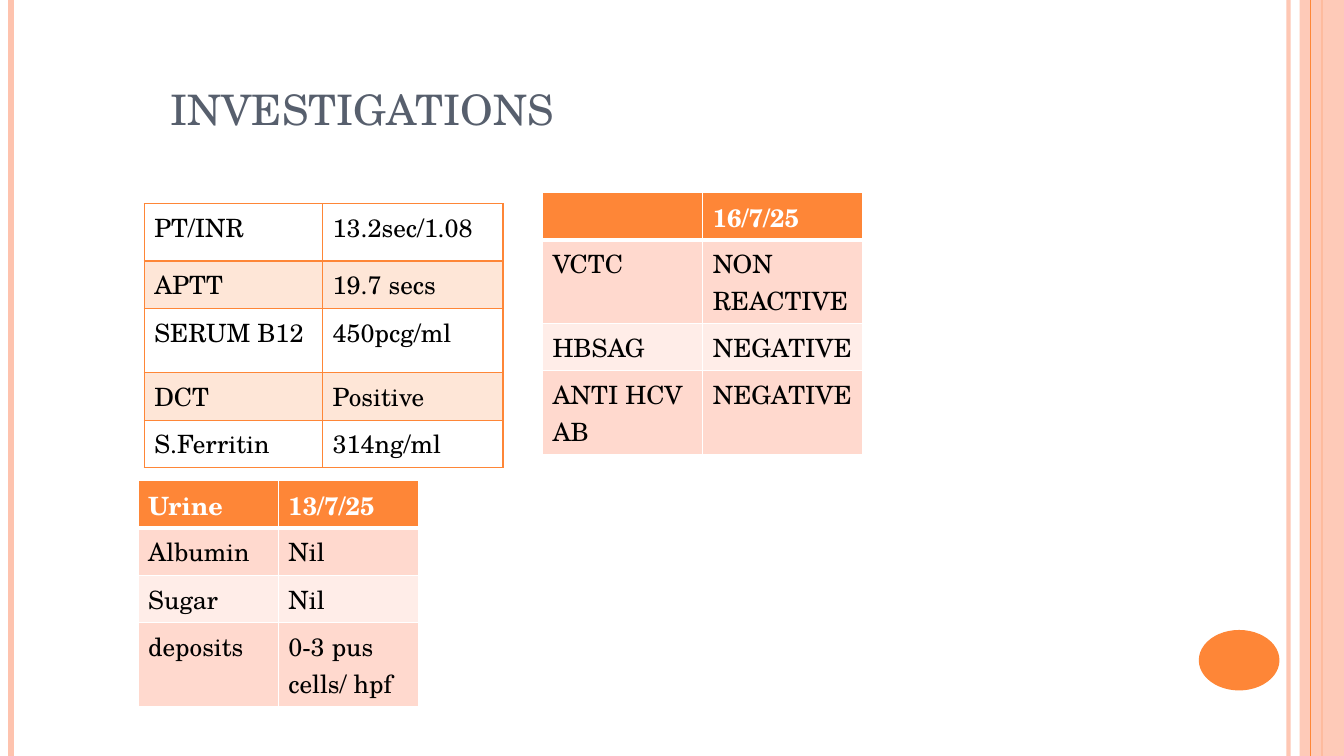
from lxml.etree import SubElement
from pptx import Presentation
from pptx.dml.color import RGBColor
from pptx.enum.shapes import MSO_CONNECTOR, MSO_SHAPE
from pptx.enum.text import MSO_ANCHOR
from pptx.oxml.ns import qn
from pptx.util import Inches, Pt

THEME = {
    "font": "TeX Gyre Schola", "title_size": 30, "body_size": 18,
    "title": "575F6D", "text": "000000", "white": "FFFFFF",
    "accent": "FE8637", "peach": "FEC3AE",
    "band_dark": "FFD9CE", "band_light": "FFEDE8",
}
W, H = 13.33, 7.5
TITLE = "INVESTIGATIONS"

# x, colour, width in points, opacity in percent
RULES = [(12.78, "peach", 3, 93), (0.11, "peach", 4.5, 100),
         (13.11, "accent", 1.5, 100)]
EDGE_RULE = (13, "accent", 0.75, 100)

# Row heights hold one or two lines of text, or a taller set value
ONE, TWO = 0.47, 0.83
TABLES = [
    {"at": (1.43, 2.02), "cols": (1.77, 1.79), "outlined": True,
     "heights": (0.57, ONE, 0.64, ONE, ONE),
     "rows": [("PT/INR", "13.2sec/1.08"), ("APTT", "19.7 secs"),
              ("SERUM B12", "450pcg/ml"), ("DCT", "Positive"),
              ("S.Ferritin", "314ng/ml")]},
    {"at": (5.38, 1.91), "cols": (1.59, 1.59), "outlined": False,
     "heights": (ONE, TWO, ONE, TWO),
     "rows": [("", "16/7/25"), ("VCTC", "NON REACTIVE"),
              ("HBSAG", "NEGATIVE"), ("ANTI HCV AB", "NEGATIVE")]},
    {"at": (1.37, 4.77), "cols": (1.39, 1.39), "outlined": False,
     "heights": (ONE, ONE, ONE, TWO),
     "rows": [("Urine", "13/7/25"), ("Albumin", "Nil"), ("Sugar", "Nil"),
              ("deposits", "0-3 pus cells/ hpf")]},
]


def rgb(name):
    return RGBColor.from_string(THEME[name])


def set_alpha(el, percent):
    if percent < 100:
        clr = next(el.iter(qn("a:srgbClr")))
        SubElement(clr, qn("a:alpha"), val=str(percent * 1000))


def add_run(p, text, size, color, bold=False):
    r = p.add_run()
    r.text = text
    r.font.name = THEME["font"]
    r.font.size = Pt(THEME[size])
    r.font.bold = bold
    r.font.color.rgb = rgb(color)
    return r


def add_rule(s, x, color, width, alpha):
    line = s.shapes.add_connector(MSO_CONNECTOR.STRAIGHT, Inches(x), 0,
                                  Inches(x), Inches(H))
    line.line.color.rgb = rgb(color)
    line.line.width = Pt(width)
    spPr = line._element.spPr
    set_alpha(spPr, alpha)
    SubElement(spPr, qn("a:effectLst"))


def add_filled(s, kind, box, color, alpha=100):
    sp = s.shapes.add_shape(kind, *map(Inches, box))
    sp.shadow.inherit = False
    sp.fill.solid()
    sp.fill.fore_color.rgb = rgb(color)
    sp.line.fill.background()
    set_alpha(sp._element.spPr, alpha)


def set_borders(cell, color, top, bottom):
    tcPr = cell._tc.get_or_add_tcPr()
    for side, width in (("L", 1), ("R", 1), ("T", top), ("B", bottom)):
        ln = SubElement(tcPr, qn("a:ln" + side), w=str(Pt(width)))
        fill = SubElement(ln, qn("a:solidFill"))
        SubElement(fill, qn("a:srgbClr"), val=THEME[color])


def set_fill(cell, row, outlined):
    if outlined and row % 2 == 0:
        cell.fill.background()
        return
    cell.fill.solid()
    if outlined or row == 0:
        color = "accent"
    else:
        color = "band_dark" if row % 2 else "band_light"
    cell.fill.fore_color.rgb = rgb(color)
    if outlined:
        set_alpha(cell._tc.tcPr.find(qn("a:solidFill")), 20)


def add_results(s, at, cols, heights, rows, outlined):
    size = (sum(cols), sum(heights))
    tbl = s.shapes.add_table(len(rows), len(cols),
                             *map(Inches, at + size)).table
    tbl.first_row = tbl.horz_banding = False
    for col, width in zip(tbl.columns, cols):
        col.width = Inches(width)
    border, heavy = ("accent", 2) if outlined else ("white", 3)
    for i, (texts, height) in enumerate(zip(rows, heights)):
        tbl.rows[i].height = Inches(height)
        header = i == 0 and not outlined
        for j, text in enumerate(texts):
            cell = tbl.cell(i, j)
            set_borders(cell, border, heavy if i == 1 else 1,
                        heavy if i == 0 else 1)
            set_fill(cell, i, outlined)
            if text:
                add_run(cell.text_frame.paragraphs[0], text, "body_size",
                        "white" if header else "text", header)


def main():
    prs = Presentation()
    prs.slide_width, prs.slide_height = Inches(W), Inches(H)
    s = prs.slides.add_slide(prs.slide_layouts[6])

    # Side decoration
    for rule in RULES:
        add_rule(s, *rule)
    add_filled(s, MSO_SHAPE.RECTANGLE, (12.89, 0, 0.44, H), "peach", 87)
    add_rule(s, *EDGE_RULE)
    add_filled(s, MSO_SHAPE.OVAL, (11.89, 6.25, 0.8, 0.6), "accent")

    # Title
    tf = s.shapes.add_textbox(*map(Inches, (1.59, 0.69, 10.5, 0.69))).text_frame
    tf.word_wrap = True
    tf.vertical_anchor = MSO_ANCHOR.BOTTOM
    r = add_run(tf.paragraphs[0], TITLE, "title_size", "title")
    r.font._element.set("cap", "small")

    # Result tables
    for table in TABLES:
        add_results(s, **table)

    prs.save("out.pptx")


if __name__ == "__main__":
    main()
